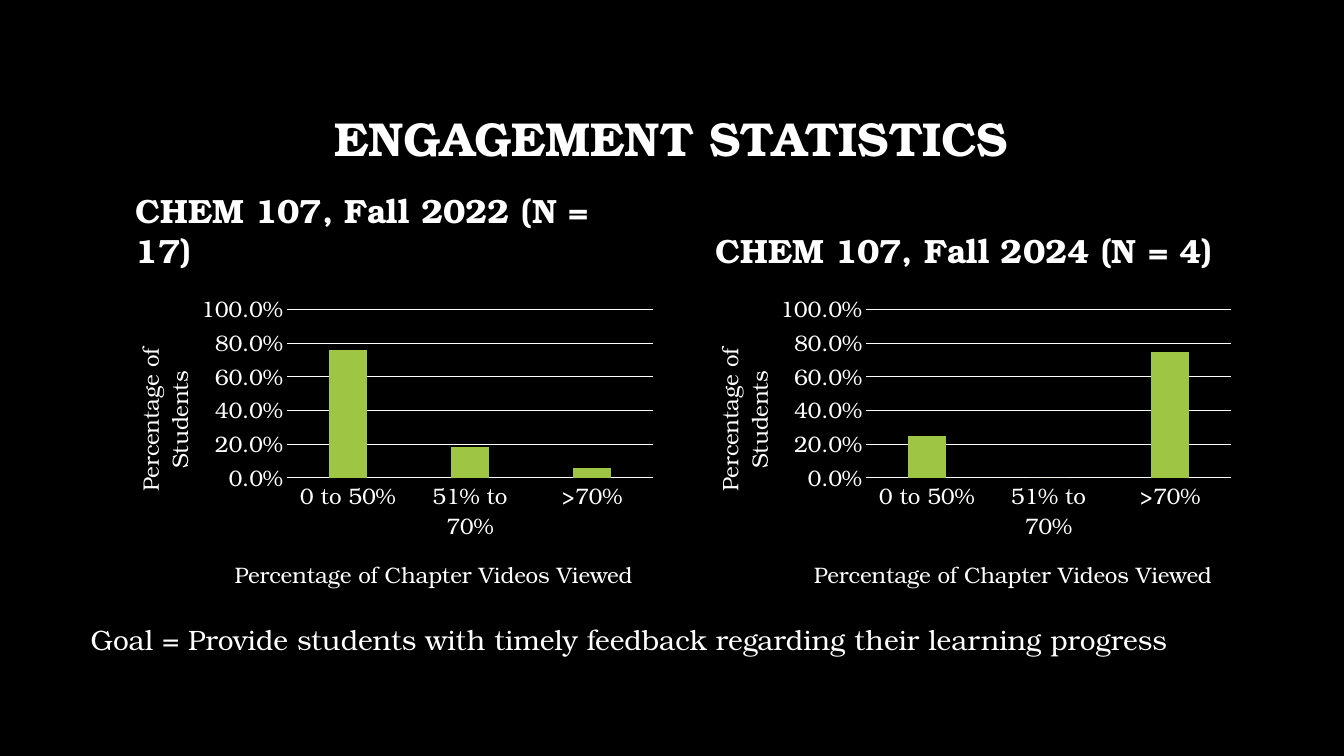
from dataclasses import dataclass

import lxml.etree
import pptx
import pptx.chart.data
import pptx.dml.color
import pptx.enum.chart
import pptx.enum.text
import pptx.oxml.ns
import pptx.util

Inches = pptx.util.Inches
FACE = "TeX Gyre Bonum"
HUES = {"back": "000000", "text": "FFFFFF", "bar": "9EC544"}
CATS = ["0 to 50%", "51% to 70%", ">70%"]
TICK = pptx.enum.chart.XL_TICK_MARK.NONE
ANCHOR = pptx.enum.text.MSO_ANCHOR
ALIGN = pptx.enum.text.PP_ALIGN


@dataclass
class Panel:
    head: str
    left: float
    wide: float
    inset: float
    vals: list[float]


PANELS = [
    Panel("CHEM 107, Fall 2022 (N = 17)", 1, 5.59, 0.25, [0.76, 0.18, 0.06]),
    Panel("CHEM 107, Fall 2024 (N = 4)", 6.75, 5.57, 0.25, [0.25, 0, 0.75]),
]


def apply(item, form: dict) -> None:
    for name, value in form.items():
        setattr(item, name, value)


def hue(name: str) -> pptx.dml.color.RGBColor:
    return pptx.dml.color.RGBColor.from_string(HUES[name])


def style(font, size: float, bold: bool = False) -> None:
    apply(font, {"name": FACE, "size": pptx.util.Pt(size), "bold": bold})
    font.color.rgb = hue("text")


def fill(frame, text: str, size: float, bold: bool = False):
    para = frame.paragraphs[0]
    run = para.add_run()
    run.text = text
    style(run.font, size, bold)
    return para


def write(slide, text: str, box: tuple, size: float, bold: bool = False,
          anchor=ANCHOR.TOP):
    left, top, wide, high = map(Inches, box)
    frame = slide.shapes.add_textbox(left, top, wide, high).text_frame
    apply(frame, {"word_wrap": True, "vertical_anchor": anchor})
    return fill(frame, text, size, bold)


def place(node, index: int, form: dict) -> None:
    tag = pptx.oxml.ns.qn
    for old in node.findall(tag("c:layout")):
        node.remove(old)
    layout = lxml.etree.Element(tag("c:layout"))
    manual = lxml.etree.SubElement(layout, tag("c:manualLayout"))
    for name, value in form.items():
        lxml.etree.SubElement(manual, tag(f"c:{name}")).set("val", str(value))
    node.insert(index, layout)


def label(axis, text: str, left: float, top: float, turn: int) -> None:
    title = axis.axis_title
    fill(title.text_frame, text, 16)
    body = title._element.find(".//" + pptx.oxml.ns.qn("a:bodyPr"))
    apply_xml = {"rot": str(turn), "vert": "horz"}
    for name, value in apply_xml.items():
        body.set(name, value)
    place(title._element, 1,
          {"xMode": "edge", "yMode": "edge", "x": left, "y": top})


def rule(line) -> None:
    line.color.rgb = hue("text")
    line.width = pptx.util.Pt(0.75)


def plot(slide, panel: Panel) -> None:
    data = pptx.chart.data.CategoryChartData()
    data.categories = CATS
    data.add_series("Series 1", panel.vals)
    kind = pptx.enum.chart.XL_CHART_TYPE.COLUMN_CLUSTERED
    box = map(Inches, (panel.left, 2.85, panel.wide, 3.15))
    chart = slide.shapes.add_chart(kind, *box, data).chart
    apply(chart, {"has_legend": False, "has_title": False})
    style(chart.font, 16)
    bars = chart.plots[0]
    apply(bars, {"gap_width": 219, "overlap": -27, "vary_by_categories": False})
    paint = bars.series[0].format.fill
    paint.solid()
    paint.fore_color.rgb = hue("bar")

    cat, val = chart.category_axis, chart.value_axis
    for axis in (cat, val):
        apply(axis, {"major_tick_mark": TICK, "minor_tick_mark": TICK})
        style(axis.tick_labels.font, 16)
    apply(val, {"minimum_scale": 0, "maximum_scale": 1, "major_unit": 0.2,
                "has_major_gridlines": True})
    apply(val.tick_labels,
          {"number_format": "0.0%", "number_format_is_linked": False})
    val.format.line.fill.background()
    rule(val.major_gridlines.format.line)
    rule(cat.format.line)
    label(cat, "Percentage of Chapter Videos Viewed", 0.23, 0.84, 0)
    label(val, "Percentage of Students", 0.05, 0.18, -5400000)
    area = chart._chartSpace.find(".//" + pptx.oxml.ns.qn("c:plotArea"))
    place(area, 0, {"layoutTarget": "inner", "xMode": "edge", "yMode": "edge",
                    "x": 0.33, "y": 0.07, "w": 0.65, "h": 0.53})


def main() -> None:
    deck = pptx.Presentation()
    apply(deck, {"slide_width": Inches(13.33), "slide_height": Inches(7.5)})
    slide = deck.slides.add_slide(deck.slide_layouts[5])
    back = slide.background.fill
    back.solid()
    back.fore_color.rgb = hue("back")

    title = slide.shapes.title
    apply(title, {"left": Inches(1), "top": Inches(0.67),
                  "width": Inches(11.32), "height": Inches(1.45)})
    title.text_frame.vertical_anchor = ANCHOR.MIDDLE
    para = fill(title.text_frame, "ENGAGEMENT STATISTICS", 34, True)
    apply(para, {"alignment": ALIGN.CENTER, "line_spacing": 0.9})

    for panel in PANELS:
        box = (panel.left + panel.inset, 1.83, 5.33, 0.9)
        para = write(slide, panel.head, box, 24, True, ANCHOR.BOTTOM)
        para.space_before = pptx.util.Pt(10)
        plot(slide, panel)
    goal = ("Goal = Provide students with timely feedback "
            "regarding their learning progress")
    write(slide, goal, (0.8, 6.13, 11.52, 0.44), 20)
    deck.save("out.pptx")


if __name__ == "__main__":
    main()
